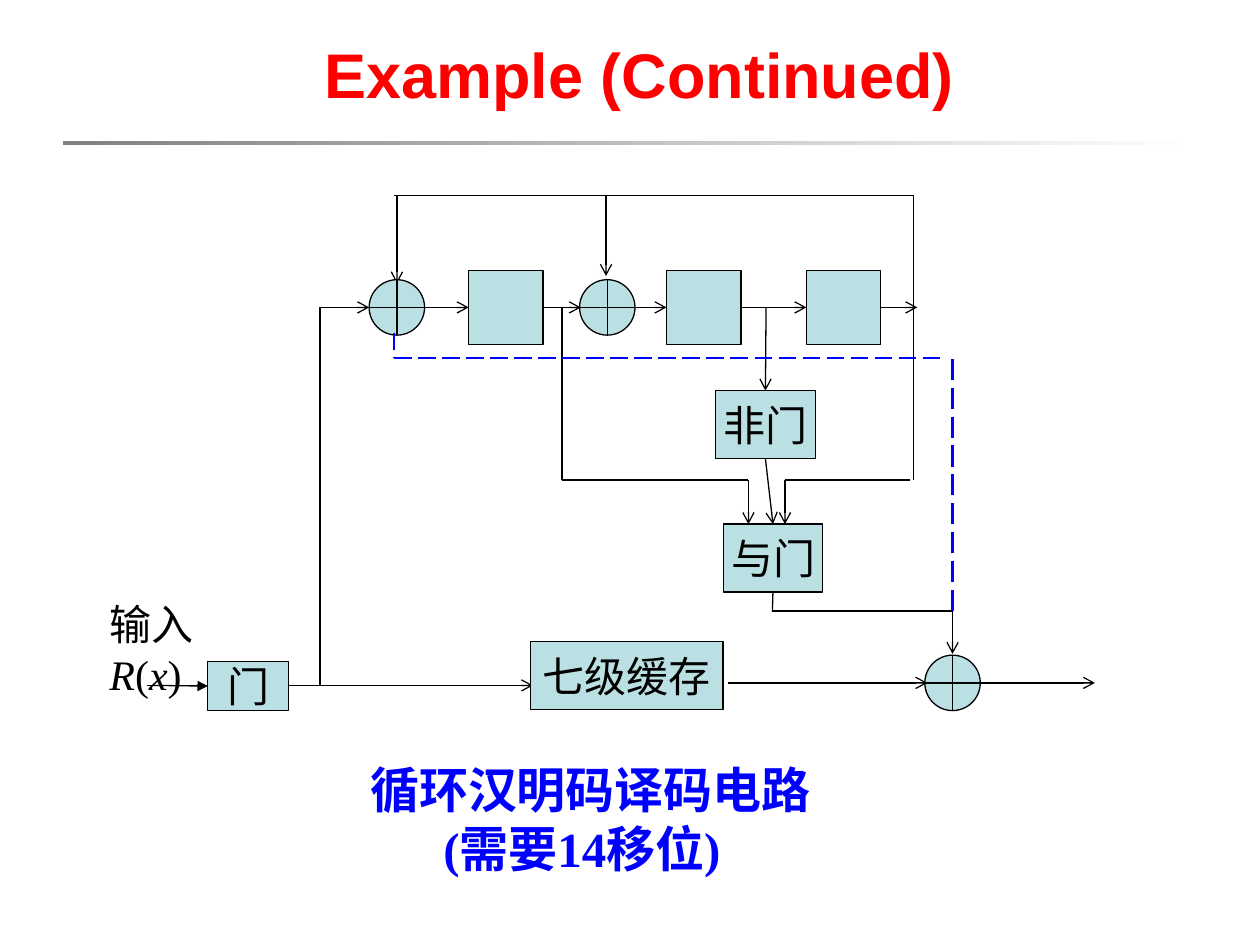
from lxml.etree import SubElement as Sub
from pptx import Presentation
from pptx.dml.color import RGBColor as Rgb
from pptx.enum.dml import MSO_LINE as Dash
from pptx.enum.shapes import MSO_CONNECTOR as Conn, MSO_SHAPE as Kind
from pptx.enum.text import MSO_ANCHOR as Anchor, PP_ALIGN as Align
from pptx.oxml.ns import qn
from pptx.util import Inches, Pt

THEME = {
    "ink": "000000", "fill": "BBE0E3", "blue": "0000FF", "red": "FF0000",
    "grey": "808080", "white": "FFFFFF", "serif": "Times New Roman",
    "sans": "Arial", "label": 24, "note": 28, "title": 36,
    "thin": 0.75, "dash": 1.25, "thick": 1.5,
}

TITLE = "Example (Continued)"
INPUT = ["输入", "R(x)"]
NOTE = ["循环汉明码译码电路", "(需要14移位)"]

ROW, LOW, TOP, MID = 2.44, 5.42, 1.55, 3.81
BUS, TURN, LOOP = 5.44, 4.85, 2.84
SIDE, RING = 0.59, 0.44
LEFT, RIGHT, SUM = 3.15, 7.25, 7.56
REG = ROW - SIDE / 2

BOXES = {
    "reg1": (3.72, REG, SIDE, SIDE, ""),
    "reg2": (5.29, REG, SIDE, SIDE, ""),
    "reg3": (6.4, REG, SIDE, SIDE, ""),
    "not": (5.68, 3.1, 0.79, 0.54, "非门"),
    "and": (5.74, 4.16, 0.79, 0.54, "与门"),
    "buffer": (4.21, 5.09, 1.53, 0.54, "七级缓存"),
    "gate": (1.65, 5.25, 0.64, 0.39, "门"),
}
ADDERS = [(LEFT, ROW), (4.82, ROW), (SUM, LOW)]

WIRES = [
    (("reg1", 3), (4.61, ROW), "arrow"),
    ((5.05, ROW), ("reg2", 1), "arrow"),
    (("reg2", 3), ("reg3", 1), "arrow"),
    (("reg3", 3), (7.28, ROW), "arrow"),
    ((LEFT, ROW), ("reg1", 1), "arrow"),
    ((RIGHT, TOP), (RIGHT, MID), None),
    ((LEFT, TOP), (LEFT, 2.25), "arrow"),
    ((3.13, TOP), (RIGHT, TOP), None),
    ((4.81, TOP), (4.81, 2.19), "arrow"),
    ((2.54, ROW), (2.93, ROW), "arrow"),
    ((2.54, ROW), (2.54, BUS), None),
    ((6.08, ROW), ("not", 0), "arrow"),
    (("not", 2), ("and", 0), "arrow"),
    ((4.46, ROW), (4.46, MID), None),
    ((4.46, MID), (5.94, MID), None),
    ((5.94, MID), (5.94, 4.16), "arrow"),
    ((6.23, MID), (7.22, MID), None),
    ((6.23, MID), (6.23, 4.16), "arrow"),
    (("and", 2), (6.13, TURN), None),
    ((6.13, TURN), (SUM, TURN), None),
    ((SUM, TURN), (SUM, 5.19), "arrow"),
    ((7.76, LOW), (8.69, LOW), "arrow"),
    ((5.78, LOW), (7.36, LOW), "arrow"),
    ((1.21, BUS), ("gate", 1), "triangle"),
]
DASHES = [
    ((3.13, 2.64), (3.13, LOOP), "dash"),
    ((3.13, LOOP), (7.51, LOOP), "dash"),
    ((SUM, TURN), (SUM, LOOP), "thick"),
]


def tint(name):
    return Rgb.from_string(THEME[name])


def paint(shape):
    shape.shadow.inherit = False
    shape.fill.solid()
    shape.fill.fore_color.rgb = tint("fill")
    shape.line.color.rgb = tint("ink")
    shape.line.width = Pt(THEME["thin"])


def style(run, size, color="ink", face="serif", bold=False):
    run.font.size, run.font.name = Pt(THEME[size]), THEME[face]
    run.font.color.rgb, run.font.bold = tint(color), bold


def spot(end):
    if not isinstance(end[0], str):
        return end
    x, y, w, h, _ = BOXES[end[0]]
    return [(x + w / 2, y), (x, y + h / 2), (x + w / 2, y + h), (x + w, y + h / 2)][end[1]]


def wire(shapes, start, end, head=None, color="ink", width="thin"):
    (x1, y1), (x2, y2) = spot(start), spot(end)
    line = shapes.add_connector(Conn.STRAIGHT, Inches(x1), Inches(y1), Inches(x2), Inches(y2))
    line.line.color.rgb = tint(color)
    line.line.width = Pt(THEME[width])
    if head:
        Sub(line.line._get_or_add_ln(), qn("a:tailEnd"), type=head)
    Sub(line._element.spPr, qn("a:effectLst"))
    return line


def box(shapes, x, y, w, h, text):
    shape = shapes.add_shape(Kind.RECTANGLE, *map(Inches, (x, y, w, h)))
    paint(shape)
    if text:
        frame = shape.text_frame
        frame.margin_left = frame.margin_right = frame.margin_top = frame.margin_bottom = 0
        frame.word_wrap = False
        frame.vertical_anchor = Anchor.MIDDLE
        frame.text = text
        frame.paragraphs[0].alignment = Align.CENTER
        style(frame.paragraphs[0].runs[0], "label")
    return shape


def adder(shapes, x, y):
    group = shapes.add_group_shape().shapes
    half = RING / 2
    paint(group.add_shape(Kind.OVAL, *map(Inches, (x - half, y - half, RING, RING))))
    wire(group, (x - half, y), (x + half, y))
    wire(group, (x, y - half), (x, y + half))


def words(shapes, place, lines):
    frame = shapes.add_textbox(*map(Inches, place)).text_frame
    frame.word_wrap = True
    frame.text = "\n".join(lines)
    return frame


def main():
    """Build the cyclic Hamming decoder slide."""
    deck = Presentation()
    deck.slide_width, deck.slide_height = Inches(10), Inches(7.5)
    shapes = deck.slides.add_slide(deck.slide_layouts[6]).shapes

    rule = shapes.add_shape(Kind.RECTANGLE, *map(Inches, (0.5, 1.12, 9, 0.03)))
    rule.shadow.inherit = False
    rule.line.fill.background()
    rule.fill.gradient()
    rule.fill.gradient_angle = 0
    for stop, name, place in zip(rule.fill.gradient_stops, ("grey", "white"), (0, 1)):
        stop.color.rgb, stop.position = tint(name), place

    wire(shapes, (1.17, BUS), (4.23, BUS), "arrow")
    made = {name: box(shapes, *data) for name, data in BOXES.items()}
    for start, end, head in WIRES:
        line = wire(shapes, start, end, head)
        if start[0] in made:
            line.begin_connect(made[start[0]], start[1])
        if end[0] in made:
            line.end_connect(made[end[0]], end[1])
    for centre in ADDERS:
        adder(shapes, *centre)
    for start, end, width in DASHES:
        wire(shapes, start, end, None, "blue", width).line.dash_style = Dash.LONG_DASH

    frame = words(shapes, (0.77, 4.7, 1.44, 0.9), INPUT)
    style(frame.paragraphs[0].runs[0], "label")
    para = frame.paragraphs[1]
    para.text = ""
    for sign in INPUT[1]:
        run = para.add_run()
        run.text = sign
        style(run, "label")
        run.font.italic = sign.isalpha()

    frame = words(shapes, (2.84, 5.98, 4.13, 1.03), NOTE)
    frame.paragraphs[1]._p.get_or_add_pPr().set("marL", str(Inches(0.58)))
    for para in frame.paragraphs:
        style(para.runs[0], "note", "blue", bold=True)

    frame = words(shapes, (1.61, 0.21, 6.93, 0.75), [TITLE])
    frame.vertical_anchor = Anchor.MIDDLE
    frame.paragraphs[0].alignment = Align.CENTER
    style(frame.paragraphs[0].runs[0], "title", "red", "sans", True)

    deck.save("out.pptx")


if __name__ == "__main__":
    main()
